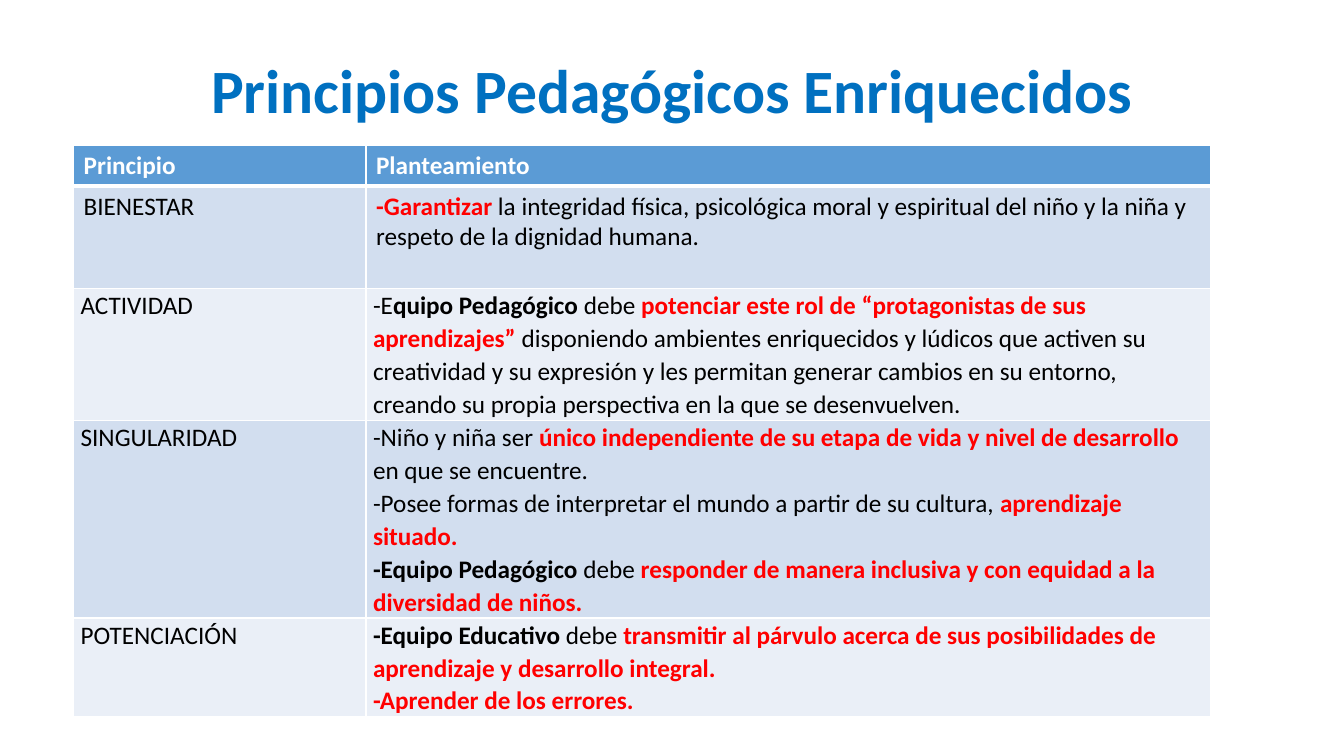
from lxml import etree
from pptx import Presentation
from pptx.dml.color import RGBColor
from pptx.enum.text import MSO_ANCHOR, PP_ALIGN
from pptx.oxml.ns import qn
from pptx.util import Inches, Pt

CENTER = PP_ALIGN.CENTER
MIDDLE = MSO_ANCHOR.MIDDLE

COLORS = {
    "title": "0070C0",
    "header": "5B9BD5",
    "odd": "D2DEEF",
    "even": "EAEFF7",
    "border": "FFFFFF",
    "white": "FFFFFF",
    "black": "000000",
    "red": "FF0000",
}

# Run styles: colour and weight
PLAIN = {"color": "black", "bold": False}
BOLD = {"color": "black", "bold": True}
KEY = {"color": "red", "bold": True}
HEADER = {"color": "white", "bold": True}


def add_span(para, text, size=18, color="black", bold=False):
    span = para.add_run()
    span.text = text
    span.font.name = "Calibri"
    span.font.size = Pt(size)
    span.font.bold = bold
    span.font.color.rgb = RGBColor.from_string(COLORS[color])


def add_border(cell, side, points):
    line = etree.SubElement(cell._tc.get_or_add_tcPr(), qn("a:ln" + side), w=str(Pt(points)))
    fill = etree.SubElement(line, qn("a:solidFill"))
    etree.SubElement(fill, qn("a:srgbClr"), val=COLORS["border"])


# Each row: height, principle, paragraphs of (text, style)
ROWS = [
    (0.4, "Principio", [[("Planteamiento", HEADER)]]),
    (1.02, "BIENESTAR", [
        [("-Garantizar", KEY),
         (" la integridad física, psicológica moral y espiritual del niño y la niña y "
          "respeto de la dignidad humana.", PLAIN)],
    ]),
    (1.3, "ACTIVIDAD", [
        [("-E", PLAIN), ("quipo Pedagógico ", BOLD), ("debe ", PLAIN),
         ("potenciar este rol de “protagonistas de sus aprendizajes”", KEY),
         (" disponiendo ambientes enriquecidos y lúdicos que activen su creatividad y su "
          "expresión y les permitan generar cambios en su entorno, creando su propia "
          "perspectiva en la que se desenvuelven.", PLAIN)],
    ]),
    (1.96, "SINGULARIDAD", [
        [("-Niño y niña ser ", PLAIN),
         ("único independiente de su etapa de vida y nivel de desarrollo", KEY),
         (" en que se encuentre.", PLAIN)],
        [("-Posee formas de interpretar el mundo a partir de su cultura, ", PLAIN),
         ("aprendizaje situado.", KEY)],
        [("-Equipo Pedagógico ", BOLD), ("debe ", PLAIN),
         ("responder de manera inclusiva y con equidad a la diversidad de niños.", KEY)],
    ]),
    (0.97, "POTENCIACIÓN", [
        [("-Equipo Educativo ", BOLD), ("debe ", PLAIN),
         ("transmitir al párvulo acerca de sus posibilidades de aprendizaje y "
          "desarrollo integral.", KEY)],
        [("-Aprender de los errores.", KEY)],
    ]),
]
COLUMN_WIDTHS = [2.9, 8.38]

deck = Presentation()
deck.slide_width = Inches(13.33)
deck.slide_height = Inches(7.5)
page = deck.slides.add_slide(deck.slide_layouts[5])

# Title
title = page.shapes.title
title.left, title.top = Inches(0.67), Inches(0.3)
title.width, title.height = Inches(12), Inches(1.25)
title.text_frame.vertical_anchor = MIDDLE
title_para = title.text_frame.paragraphs[0]
title_para.alignment = CENTER
title_para.line_spacing = 0.9
add_span(title_para, "Principios Pedagógicos Enriquecidos", size=44, color="title", bold=True)

# Table of principles
table = page.shapes.add_table(
    len(ROWS), len(COLUMN_WIDTHS), Inches(0.73), Inches(1.44),
    Inches(sum(COLUMN_WIDTHS)), Inches(sum(row[0] for row in ROWS))).table
for column, width in zip(table.columns, COLUMN_WIDTHS):
    column.width = Inches(width)

for row_index, (height, principle, approach) in enumerate(ROWS):
    table.rows[row_index].height = Inches(height)
    is_header = row_index == 0
    compact = row_index >= 2
    band = "header" if is_header else ("odd" if row_index % 2 else "even")
    principle_style = HEADER if is_header else PLAIN

    for column_index, paragraphs in enumerate([[[(principle, principle_style)]], approach]):
        cell = table.cell(row_index, column_index)

        # Borders come before the fill, with a thick rule under the header
        for side in "LRTB":
            under_header = (row_index, side) in [(0, "B"), (1, "T")]
            add_border(cell, side, 3 if under_header else 1)
        cell.fill.solid()
        cell.fill.fore_color.rgb = RGBColor.from_string(COLORS[band])

        if compact:
            cell.margin_left = cell.margin_right = Inches(0.07)
            cell.margin_top = cell.margin_bottom = 0

        frame = cell.text_frame
        for para_index, spans in enumerate(paragraphs):
            para = frame.add_paragraph() if para_index else frame.paragraphs[0]
            if compact:
                para.line_spacing = 1.07
            for text, style in spans:
                add_span(para, text, **style)

deck.save("out.pptx")
